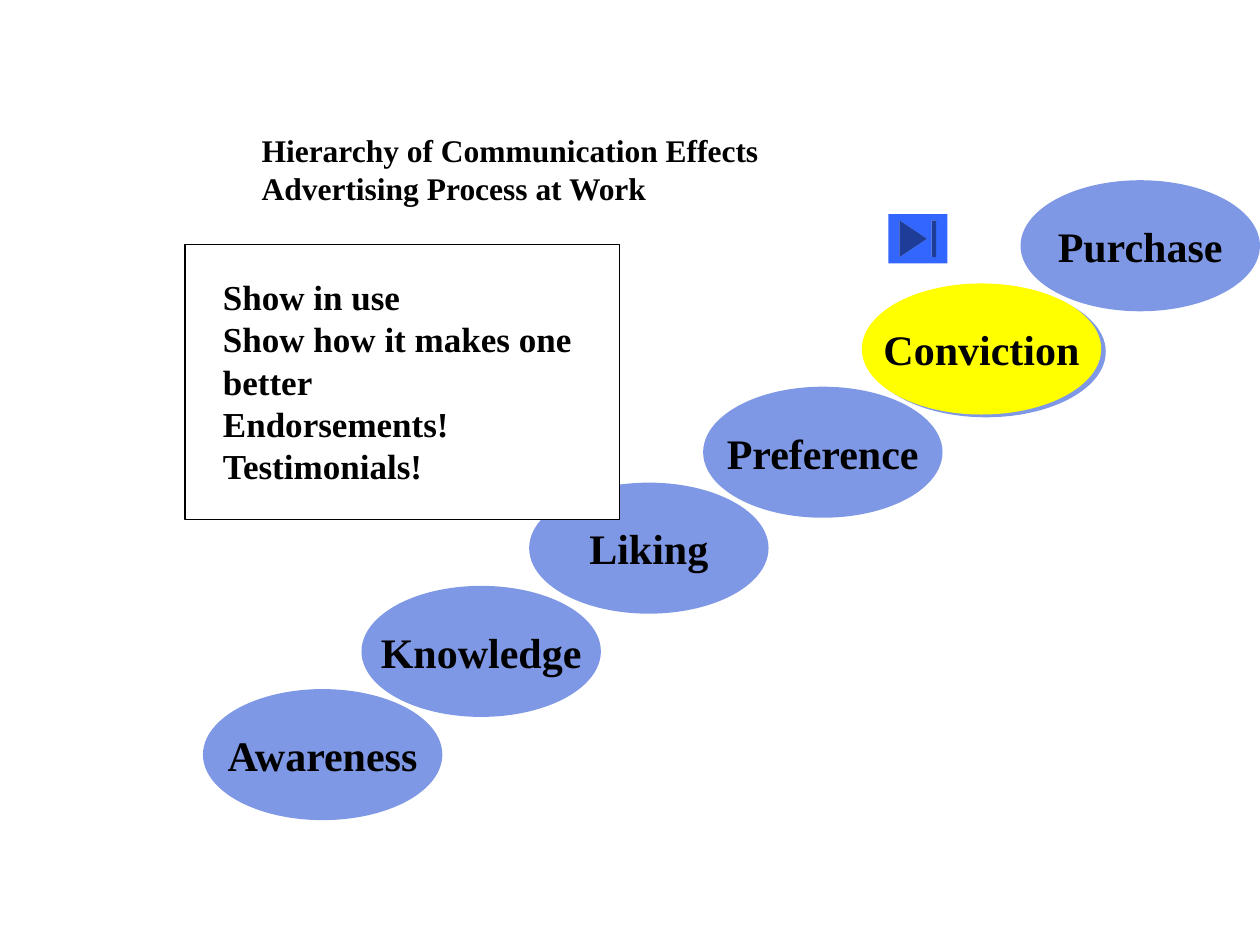
from lxml import etree
from pptx import Presentation
from pptx.dml.color import RGBColor
from pptx.enum.shapes import MSO_SHAPE
from pptx.enum.text import MSO_ANCHOR, PP_ALIGN
from pptx.oxml.ns import qn
from pptx.util import Pt

OVAL, RECT, END_BUTTON = MSO_SHAPE.OVAL, MSO_SHAPE.RECTANGLE, MSO_SHAPE.ACTION_BUTTON_END
TOP, MIDDLE = MSO_ANCHOR.TOP, MSO_ANCHOR.MIDDLE
LEFT, CENTER = PP_ALIGN.LEFT, PP_ALIGN.CENTER

BLACK = RGBColor(0x00, 0x00, 0x00)
WHITE = RGBColor(0xFF, 0xFF, 0xFF)
BLUE = RGBColor(0x00, 0x33, 0xCC)
BUTTON_BLUE = RGBColor(0x33, 0x66, 0xFF)
YELLOW = RGBColor(0xFF, 0xFF, 0x00)
FONT = "Times New Roman"

TITLE = ["Hierarchy of Communication Effects", "Advertising Process at Work"]
TACTICS = ["Show in use", "Show how it makes one better", "Endorsements!", "Testimonials!"]
# Label, left, top
STEPS = [
    ("Awareness", 116, 393.8),
    ("Knowledge", 206.6, 334.8),
    ("Liking", 302.4, 275.8),
    ("Preference", 401.8, 221),
    ("Purchase", 583.2, 103),
]
CURRENT_STEP = ("Conviction", 492.5, 162)
STEP_SIZE = (136.8, 74.9)
SHADE_OFFSET = (2.6, 1.6)


def add_text(sp, lines, size, align=LEFT, anchor=TOP, wrap=True):
    tf = sp.text_frame
    tf.word_wrap = wrap
    tf.vertical_anchor = anchor
    for i, line in enumerate(lines):
        p = tf.add_paragraph() if i else tf.paragraphs[0]
        p.alignment = align
        r = p.add_run()
        r.text = line
        r.font.name, r.font.size, r.font.bold = FONT, Pt(size), True
        r.font.color.rgb = BLACK


def add_shape(s, kind, box, color, opacity=100):
    sp = s.shapes.add_shape(kind, *map(Pt, box))
    sp.shadow.inherit = False
    sp.fill.solid()
    sp.fill.fore_color.rgb = color
    sp.line.fill.background()
    if opacity < 100:
        clr = sp.fill._xPr.find(".//" + qn("a:srgbClr"))
        etree.SubElement(clr, qn("a:alpha"), val=str(opacity * 1000))
    return sp


def add_step(s, label, left, top, color=BLUE, opacity=50):
    sp = add_shape(s, OVAL, (left, top, *STEP_SIZE), color, opacity)
    add_text(sp, [label], 24, CENTER, MIDDLE, wrap=False)


def main():
    prs = Presentation()
    prs.slide_width, prs.slide_height = Pt(720), Pt(540)
    s = prs.slides.add_slide(prs.slide_layouts[6])

    _, left, top = CURRENT_STEP
    dx, dy = SHADE_OFFSET
    add_shape(s, OVAL, (left + dx, top + dy, *STEP_SIZE), BLUE, 50)

    title = s.shapes.add_textbox(Pt(142.4), Pt(71.3), Pt(301), Pt(50.4))
    add_text(title, TITLE, 18)

    for step in STEPS:
        add_step(s, *step)
    add_step(s, *CURRENT_STEP, YELLOW, 100)

    panel = add_shape(s, RECT, (105.8, 139.7, 248.4, 157), WHITE)
    panel.line.color.rgb = BLACK
    panel.line.width = Pt(0.75)
    tf = panel.text_frame
    tf.margin_left = tf.margin_right = Pt(21.6)
    tf.margin_top = tf.margin_bottom = Pt(18)
    add_text(panel, TACTICS, 20)

    add_shape(s, END_BUTTON, (507.6, 122.4, 33.8, 28.1), BUTTON_BLUE)
    prs.save("out.pptx")


if __name__ == "__main__":
    main()
